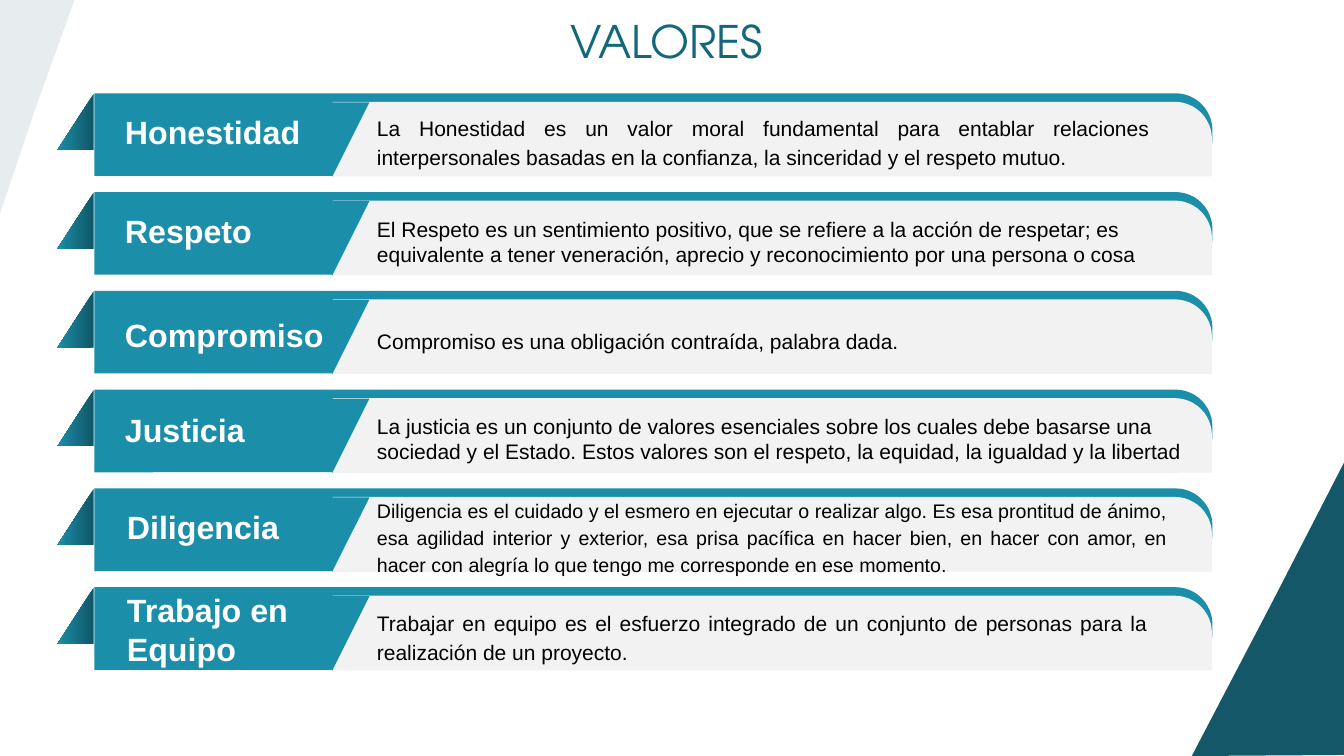
import pptx
import pptx.util
import pptx.dml.color
import pptx.enum.shapes
import pptx.enum.text
import pptx.oxml
import pptx.oxml.ns

Inches = pptx.util.Inches
Preset = pptx.enum.shapes.MSO_SHAPE
Align = pptx.enum.text.PP_ALIGN

COLORS = {"teal": "1B8EA9", "fold": "105666", "card": "F2F2F2", "corner": "145768",
          "title": "13677B", "label": "FFFFFF", "body": "000000"}

TITLE = "VALORES"
TITLE_BOX = (0.86, 0.15, 11.5, 0.74)

VALUES = [
    {"name": "Honestidad", "name_box": (1.14, 1.07, 2.14, 0.5),
     "meaning": "La Honestidad es un valor moral fundamental para entablar relaciones "
                "interpersonales basadas en la confianza, la sinceridad y el respeto mutuo.",
     "meaning_box": (3.64, 1.06, 7.86, 0.66), "style": "justified"},
    {"name": "Respeto", "name_box": (1.14, 2.05, 1.62, 0.5),
     "meaning": "El Respeto es un sentimiento positivo, que se refiere a la acción de respetar; es "
                "equivalente a tener veneración, aprecio y reconocimiento por una persona o cosa",
     "meaning_box": (3.64, 2.1, 8.24, 0.61), "style": "plain"},
    {"name": "Compromiso", "name_box": (1.14, 3.08, 2.43, 0.49),
     "meaning": "Compromiso es una obligación contraída, palabra dada.",
     "meaning_box": (3.64, 3.17, 6.68, 0.37), "style": "justified"},
    {"name": "Justicia", "name_box": (1.14, 4.02, 1.71, 0.5),
     "meaning": "La justicia es un conjunto de valores esenciales sobre los cuales debe basarse una "
                "sociedad y el Estado. Estos valores son el respeto, la equidad, la igualdad y la libertad",
     "meaning_box": (3.64, 4.05, 8.24, 0.61), "style": "plain"},
    {"name": "Diligencia", "name_box": (1.16, 4.98, 1.77, 0.5),
     "meaning": "Diligencia es el cuidado y el esmero en ejecutar o realizar algo. Es esa prontitud de "
                "ánimo, esa agilidad interior y exterior, esa prisa pacífica en hacer bien, en hacer con "
                "amor, en hacer con alegría lo que tengo me corresponde en ese momento.",
     "meaning_box": (3.64, 4.87, 8.04, 0.9), "style": "compact"},
    {"name": "Trabajo en Equipo", "name_box": (1.16, 5.81, 2.02, 0.88),
     "meaning": "Trabajar en equipo es el esfuerzo integrado de un conjunto de personas para la "
                "realización de un proyecto.",
     "meaning_box": (3.64, 5.97, 7.84, 0.82), "style": "justified"},
]

JUSTIFIED = {"alignment": Align.JUSTIFY, "line_spacing": 1.15, "space_after": pptx.util.Pt(10)}
LEFT = {"alignment": Align.LEFT}
STYLES = {
    "title": ({"name": "TeX Gyre Adventor", "size": pptx.util.Pt(32)}, "title",
              {"alignment": Align.CENTER, "line_spacing": 0.9}),
    "label": ({"name": "Arial", "size": pptx.util.Pt(23), "bold": True}, "label", LEFT),
    "plain": ({"name": "Arial", "size": pptx.util.Pt(15)}, "body", LEFT),
    "justified": ({"name": "Arial", "size": pptx.util.Pt(15)}, "body", JUSTIFIED),
    "compact": ({"name": "Arial", "size": pptx.util.Pt(14)}, "body", JUSTIFIED),
}

CORNERS = [
    ([(12.62, 5.97), (13.33, 4.59), (13.33, 7.49), (11.82, 7.5)], 100),
    ([(0.34, 1.11), (-0.01, 2.15), (-0.01, -0.02), (0.75, -0.03)], 10),
]

FIRST_TOP, PITCH = 0.93, 0.98
BANNER = [
    {"preset": Preset.RIGHT_TRIANGLE, "box": (0.57, 0, 0.36, 0.56), "flips": ["flipH"],
     "gradient": ["fold", "teal"]},
    {"preset": Preset.ROUND_2_SAME_RECTANGLE, "box": (6.07, -5.14, 0.82, 11.09),
     "rotation": 90, "adjust": [0.449, 0], "fill": "teal"},
    {"preset": Preset.ROUND_1_RECTANGLE, "box": (3.3, 0.08, 8.72, 0.74),
     "adjust": [0.5], "fill": "card"},
    {"preset": Preset.RIGHT_TRIANGLE, "box": (3.11, 0.27, 0.74, 0.37),
     "rotation": 270, "flips": ["flipH", "flipV"], "fill": "teal"},
]


def rgb(color):
    """Return the named colour."""
    return pptx.dml.color.RGBColor.from_string(COLORS[color])


def apply(target, values):
    """Set each named attribute on the target."""
    for attribute, value in values.items():
        setattr(target, attribute, value)


def add_text(slide, text, box, style):
    """Add a wrapped one-paragraph text box."""
    font, color, layout = STYLES[style]
    frame = slide.shapes.add_textbox(*map(Inches, box)).text_frame
    frame.word_wrap = True
    paragraph = frame.paragraphs[0]
    apply(paragraph, layout)
    run = paragraph.add_run()
    run.text = text
    apply(run.font, font)
    run.font.color.rgb = rgb(color)


def add_corner(slide, points, opacity):
    """Add a coloured corner of the backdrop."""
    start, *rest = [(Inches(x), Inches(y)) for x, y in points]
    builder = slide.shapes.build_freeform(*start)
    builder.add_line_segments(rest, close=True)
    corner = builder.convert_to_shape()
    corner.shadow.inherit = False
    corner.line.fill.background()
    corner.fill.solid()
    corner.fill.fore_color.rgb = rgb("corner")
    if opacity < 100:
        color = corner.element.spPr.find(".//" + pptx.oxml.ns.qn("a:srgbClr"))
        alpha = color.makeelement(pptx.oxml.ns.qn("a:alpha"), {"val": str(opacity * 1000)})
        color.append(alpha)


def add_banner(slide, top):
    """Add the ribbon and card of one value."""
    for part in BANNER:
        x, y, width, height = part["box"]
        piece = slide.shapes.add_shape(part["preset"], *map(Inches, (x, top + y, width, height)))
        piece.shadow.inherit = False
        piece.line.fill.background()
        piece.rotation = part.get("rotation", 0)
        for index, value in enumerate(part.get("adjust", [])):
            piece.adjustments[index] = value
        for flip in part.get("flips", []):
            piece.element.spPr.xfrm.set(flip, "1")
        if "gradient" in part:
            piece.fill.gradient()
            piece.fill.gradient_angle = 0
            for stop, color in zip(piece.fill.gradient_stops, part["gradient"]):
                stop.color.rgb = rgb(color)
        else:
            piece.fill.solid()
            piece.fill.fore_color.rgb = rgb(part["fill"])


def main():
    """Build the slide of values."""
    deck = pptx.Presentation()
    apply(deck, {"slide_width": Inches(13.33), "slide_height": Inches(7.5)})
    slide = deck.slides.add_slide(deck.slide_layouts[6])
    for points, opacity in CORNERS:
        add_corner(slide, points, opacity)
    add_text(slide, TITLE, TITLE_BOX, "title")
    for row, value in enumerate(VALUES):
        add_banner(slide, FIRST_TOP + row * PITCH)
        add_text(slide, value["meaning"], value["meaning_box"], value["style"])
        add_text(slide, value["name"], value["name_box"], "label")
    deck.save("out.pptx")


if __name__ == "__main__":
    main()
